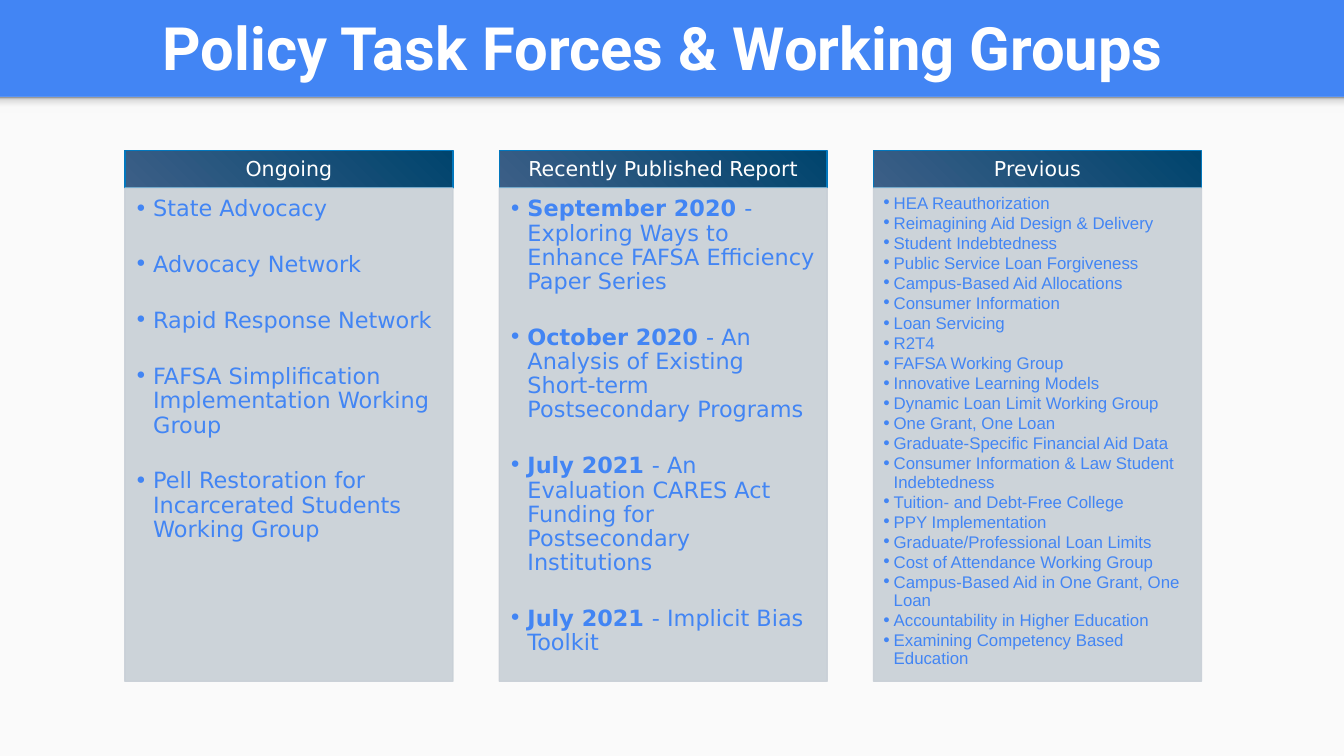
from dataclasses import dataclass

from lxml.etree import SubElement
from pptx import Presentation
from pptx.dml.color import RGBColor
from pptx.enum.shapes import MSO_SHAPE
from pptx.enum.text import MSO_ANCHOR, MSO_AUTO_SIZE, PP_ALIGN
from pptx.oxml.ns import qn
from pptx.util import Inches, Pt


@dataclass(frozen=True)
class Theme:
    blue: str = "4285F4"
    white: str = "FFFFFF"
    paper: str = "FAFAFA"
    panel: str = "C8CFD6"
    header_line: str = "0277BD"
    header_stops: tuple = ((0, "3C5F87"), (100, "00446D"))
    shadow_stops: tuple = ((0, "F9F9F9"), (36, "F9F9F9"), (80, "DEDEDE"), (100, "999999"))
    title_font: str = "Roboto"
    body_font: str = "DejaVu Sans"
    list_font: str = "Arial"
    title_size: int = 32
    header_size: int = 11
    body_size: int = 12
    list_size: int = 9


THEME = Theme()

ONGOING = [
    "State Advocacy",
    "Advocacy Network",
    "Rapid Response Network",
    "FAFSA Simplification Implementation Working Group",
    "Pell Restoration for Incarcerated Students Working Group",
]
REPORTS = [
    ("September 2020 ", "- Exploring Ways to Enhance FAFSA Efficiency Paper Series"),
    ("October 2020 ", "- An Analysis of Existing Short-term Postsecondary Programs"),
    ("July 2021 ", "- An Evaluation CARES Act Funding for Postsecondary Institutions"),
    ("July 2021 ", "- Implicit Bias Toolkit"),
]
PREVIOUS = [
    "HEA Reauthorization",
    "Reimagining Aid Design & Delivery",
    "Student Indebtedness",
    "Public Service Loan Forgiveness",
    "Campus-Based Aid Allocations",
    "Consumer Information",
    "Loan Servicing",
    "R2T4",
    "FAFSA Working Group",
    "Innovative Learning Models",
    "Dynamic Loan Limit Working Group",
    "One Grant, One Loan",
    "Graduate-Specific Financial Aid Data",
    "Consumer Information & Law Student Indebtedness",
    "Tuition- and Debt-Free College",
    "PPY Implementation",
    "Graduate/Professional Loan Limits",
    "Cost of Attendance Working Group",
    "Campus-Based Aid in One Grant, One Loan",
    "Accountability in Higher Education",
    "Examining Competency Based Education",
]
BODY_STYLE = dict(font=THEME.body_font, size=THEME.body_size, indent=(0.14, -0.14),
                  gap=17, insets=(0.07, 0.07, 0.09, 0.1))
LIST_STYLE = dict(font=THEME.list_font, size=THEME.list_size, indent=(0.1, -0.09),
                  gap=1, insets=(0.05, 0.05, 0.07, 0.08))
COLUMNS = [
    ("Ongoing", ONGOING, BODY_STYLE),
    ("Recently Published Report", REPORTS, BODY_STYLE),
    ("Previous", PREVIOUS, LIST_STYLE),
]


def add_rect(s, left, top, width, height, fill=None, line=None):
    sp = s.shapes.add_shape(MSO_SHAPE.RECTANGLE, Inches(left), Inches(top),
                            Inches(width), Inches(height))
    sp.shadow.inherit = False
    if fill:
        sp.fill.solid()
        sp.fill.fore_color.rgb = RGBColor.from_string(fill)
    if line:
        sp.line.color.rgb = RGBColor.from_string(line)
        sp.line.width = Pt(0.75)
    else:
        sp.line.fill.background()
    return sp


def set_gradient(sp, stops, angle=None):
    sp.fill.gradient()
    grad = sp._element.spPr.find(qn("a:gradFill"))
    for child in list(grad):
        grad.remove(child)
    stop_list = SubElement(grad, qn("a:gsLst"))
    for pos, color in stops:
        gs = SubElement(stop_list, qn("a:gs"), pos=str(pos * 1000))
        SubElement(gs, qn("a:srgbClr"), val=color)
    if angle is None:
        radial = SubElement(grad, qn("a:path"), path="circle")
        SubElement(radial, qn("a:fillToRect"), t="100000", r="100000")
    else:
        SubElement(grad, qn("a:lin"), ang=str(angle * 60000), scaled="0")


def set_opacity(sp, percent):
    for color in sp._element.spPr.iter(qn("a:srgbClr")):
        SubElement(color, qn("a:alpha"), val=str(percent * 1000))


def add_bullet(p, color, margin, hanging):
    pPr = p._p.get_or_add_pPr()
    pPr.set("marL", str(Inches(margin)))
    pPr.set("indent", str(Inches(hanging)))
    SubElement(SubElement(pPr, qn("a:buClr")), qn("a:srgbClr"), val=color)
    SubElement(pPr, qn("a:buFont"), typeface=THEME.body_font)
    SubElement(pPr, qn("a:buChar"), char="•")


def write_text(sp, items, font, size, color, bold=False, align=PP_ALIGN.LEFT,
               anchor=MSO_ANCHOR.TOP, insets=(0.07, 0.04, 0.07, 0.04),
               spacing=0.9, gap=0, indent=None):
    tf = sp.text_frame
    tf.word_wrap = True
    tf.auto_size = MSO_AUTO_SIZE.NONE
    tf.vertical_anchor = anchor
    tf.margin_left, tf.margin_top, tf.margin_right, tf.margin_bottom = map(Inches, insets)
    for i, item in enumerate(items):
        p = tf.add_paragraph() if i else tf.paragraphs[0]
        p.alignment = align
        p.line_spacing = spacing
        p.space_before = Pt(gap if i else 0)
        if indent:
            add_bullet(p, color, *indent)
        lead, rest = ("", item) if isinstance(item, str) else item
        for text, is_bold in ((lead, True), (rest, bold)):
            if text:
                r = p.add_run()
                r.text = text
                r.font.name = font
                r.font.size = Pt(size)
                r.font.bold = is_bold
                r.font.color.rgb = RGBColor.from_string(color)


def add_title_band(s, left, top, width, height):
    title = s.shapes.title
    title.left, title.top = Inches(left + 0.11), Inches(top + 0.02)
    title.width, title.height = Inches(width - 0.35), Inches(height - 0.06)
    write_text(title, ["Policy Task Forces & Working Groups"], THEME.title_font,
               THEME.title_size, THEME.white, bold=True, align=PP_ALIGN.CENTER,
               anchor=MSO_ANCHOR.MIDDLE, spacing=1.0)


def add_page(s, left, top, width, height):
    add_rect(s, left, top, width, height, fill=THEME.paper)
    shadow = add_rect(s, left, top, width, 0.12)
    set_gradient(shadow, THEME.shadow_stops, angle=270)


def add_column(s, left, top, width, height, heading, items, style):
    header_h = 0.28
    header = add_rect(s, left, top, width, header_h, line=THEME.header_line)
    set_gradient(header, THEME.header_stops)
    write_text(header, [heading], THEME.body_font, THEME.header_size, THEME.white,
               align=PP_ALIGN.CENTER, anchor=MSO_ANCHOR.MIDDLE,
               insets=(0.08, 0.05, 0.08, 0.05))
    panel = add_rect(s, left, top + header_h, width, height - header_h,
                     fill=THEME.panel, line=THEME.panel)
    set_opacity(panel, 90)
    write_text(panel, items, color=THEME.blue, **style)


def add_columns(s, left, top, width, height):
    column_w = 2.44
    pitch = (width - column_w) / (len(COLUMNS) - 1)
    for i, column in enumerate(COLUMNS):
        add_column(s, left + i * pitch, top, column_w, height, *column)


def main():
    prs = Presentation()
    prs.slide_width = Inches(10)
    prs.slide_height = prs.slide_width * 9 // 16
    s = prs.slides.add_slide(prs.slide_layouts[5])
    s.background.fill.solid()
    s.background.fill.fore_color.rgb = RGBColor.from_string(THEME.blue)
    add_title_band(s, 0, 0, 10, 0.72)
    add_page(s, 0, 0.72, 10, prs.slide_height.inches - 0.72)
    add_columns(s, 0.93, 1.12, 8.01, 3.95)
    prs.save("out.pptx")


if __name__ == "__main__":
    main()
